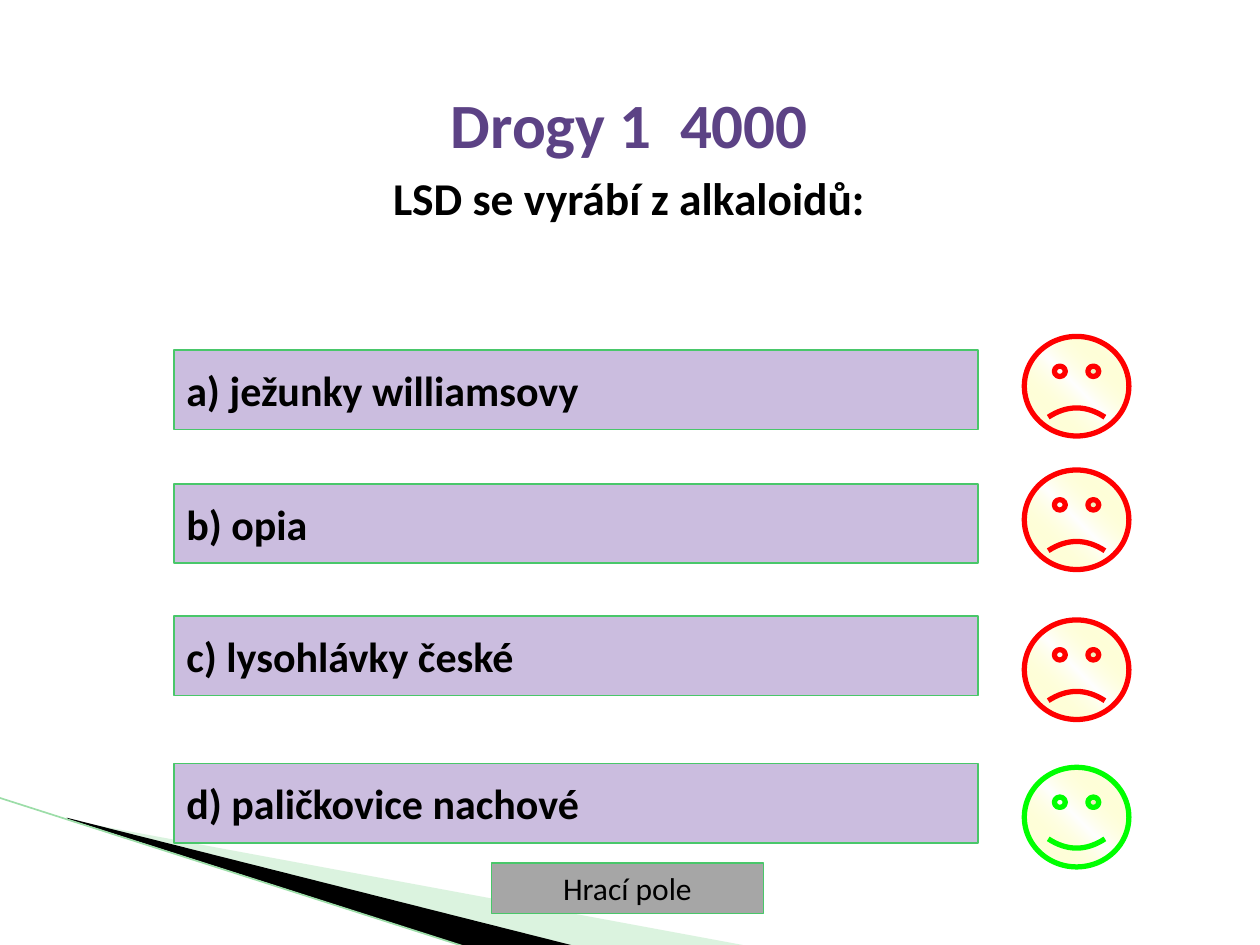
from lxml.etree import SubElement
from pptx import Presentation
from pptx.dml.color import RGBColor
from pptx.enum.shapes import MSO_CONNECTOR, MSO_SHAPE
from pptx.enum.text import MSO_ANCHOR, PP_ALIGN
from pptx.oxml import parse_xml
from pptx.oxml.ns import nsdecls, qn
from pptx.util import Inches, Pt

WHITE = RGBColor(0xFF, 0xFF, 0xFF)
BLACK = RGBColor(0x00, 0x00, 0x00)
PURPLE = RGBColor(0x5C, 0x42, 0x85)
LILAC = RGBColor(0xCB, 0xBD, 0xDF)
GREY = RGBColor(0xA6, 0xA6, 0xA6)
GREEN = RGBColor(0x49, 0xC7, 0x6A)
PALE_GREEN = RGBColor(0xA5, 0xE1, 0xAF)
LINE_GREEN = RGBColor(0x9C, 0xDD, 0xA8)
YELLOW = RGBColor(0xFF, 0xFF, 0x66)
RIGHT_ANSWER = RGBColor(0x00, 0xFF, 0x00)
WRONG_ANSWER = RGBColor(0xFF, 0x00, 0x00)


class QuizSlide:
    """Hold the quiz style and the current slide and draw its elements."""

    font_name = "Calibri"

    def __init__(self, presentation):
        self.slide = presentation.slides.add_slide(presentation.slide_layouts[5])

    def format_text(self, paragraph, text, color, **values):
        paragraph.text = text
        font = paragraph.runs[0].font
        font.color.rgb = color
        for name, value in {"name": self.font_name, **values}.items():
            setattr(font, name, value)

    def title(self, box, lines):
        shape = self.slide.shapes.title
        for name, value in zip(("left", "top", "width", "height"), box):
            setattr(shape, name, Inches(value))
        frame = shape.text_frame
        frame.word_wrap = True
        frame.vertical_anchor = MSO_ANCHOR.TOP
        for index, (text, size, color) in enumerate(lines):
            paragraph = frame.add_paragraph() if index else frame.paragraphs[0]
            paragraph.alignment = PP_ALIGN.CENTER
            paragraph.space_before = Pt(5 if index else 0)
            self.format_text(paragraph, text, color, size=Pt(size), bold=True)

    def wedge(self, points, color, opacity=100):
        start, *others = [(Inches(x), Inches(y)) for x, y in points]
        builder = self.slide.shapes.build_freeform(*start)
        builder.add_line_segments(others, close=True)
        shape = builder.convert_to_shape()
        shape.shadow.inherit = False
        shape.fill.solid()
        shape.fill.fore_color.rgb = color
        shape.line.fill.background()
        if opacity < 100:
            color_element = shape.fill._xPr.find(qn("a:solidFill"))[0]
            SubElement(color_element, qn("a:alpha"), val=str(opacity * 1000))

    def line(self, start, end, color, width):
        ends = [Inches(value) for value in (*start, *end)]
        connector = self.slide.shapes.add_connector(MSO_CONNECTOR.STRAIGHT, *ends)
        connector.line.color.rgb = color
        connector.line.width = Pt(width)
        SubElement(connector._element.spPr, qn("a:effectLst"))

    def preset(self, kind, box, line_color, line_width):
        shape = self.slide.shapes.add_shape(kind, *[Inches(value) for value in box])
        shape.shadow.inherit = False
        shape.line.color.rgb = line_color
        shape.line.width = Pt(line_width)
        return shape

    def button(self, box, text, fill, line_width, alignment, **values):
        shape = self.preset(MSO_SHAPE.ACTION_BUTTON_CUSTOM, box, GREEN, line_width)
        shape.fill.solid()
        shape.fill.fore_color.rgb = fill
        frame = shape.text_frame
        frame.word_wrap = True
        frame.vertical_anchor = MSO_ANCHOR.MIDDLE
        paragraph = frame.paragraphs[0]
        paragraph.alignment = alignment
        self.format_text(paragraph, text, BLACK, **values)

    def face(self, box, is_right):
        color = RIGHT_ANSWER if is_right else WRONG_ANSWER
        shape = self.preset(MSO_SHAPE.SMILEY_FACE, box, color, 3)
        shape.adjustments[0] = 0.047 if is_right else -0.047
        shape.fill.background()
        properties = shape._element.spPr
        properties.replace(properties.find(qn("a:noFill")), parse_xml(
            f'<a:gradFill {nsdecls("a")} rotWithShape="1"><a:gsLst>'
            f'<a:gs pos="0"><a:srgbClr val="{WHITE}"/></a:gs>'
            f'<a:gs pos="50000"><a:srgbClr val="{YELLOW}"><a:alpha val="0"/></a:srgbClr></a:gs>'
            f'<a:gs pos="100000"><a:srgbClr val="{WHITE}"/></a:gs>'
            '</a:gsLst><a:lin ang="18900000" scaled="1"/></a:gradFill>'))


def main():
    presentation = Presentation()
    presentation.slide_width = Inches(10)
    presentation.slide_height = Inches(7.5)
    quiz = QuizSlide(presentation)

    quiz.wedge([(0.55, 6.51), (5.95, 7.51), (4.56, 7.51), (0.55, 6.5)], PALE_GREEN, 40)
    quiz.wedge([(0.53, 6.49), (4.57, 7.51), (3.72, 7.52), (0.54, 6.5)], BLACK)
    quiz.line((-0.01, 6.33), (3.71, 7.52), LINE_GREEN, 0.95)
    quiz.title((0.39, 0.63, 9.21, 0.75), [
        ("Drogy 1  4000", 36, PURPLE),
        ("LSD se vyrábí z alkaloidů:", 26, BLACK),
    ])
    answers = [
        ("a) ježunky williamsovy", 2.78, 2.67, False),
        ("b) opia", 3.84, 3.73, False),
        ("c) lysohlávky české", 4.89, 4.92, False),
        ("d) paličkovice nachové", 6.06, 6.09, True),
    ]
    for text, button_top, face_top, is_right in answers:
        quiz.button((1.38, button_top, 6.38, 0.63), text, LILAC, 1,
                    PP_ALIGN.LEFT, size=Pt(24), bold=True)
        quiz.face((8.13, face_top, 0.83, 0.79), is_right)
    quiz.button((3.9, 6.85, 2.16, 0.4), "Hrací pole", GREY, 0.75,
                PP_ALIGN.CENTER, size=Pt(18))
    presentation.save("out.pptx")


if __name__ == "__main__":
    main()
